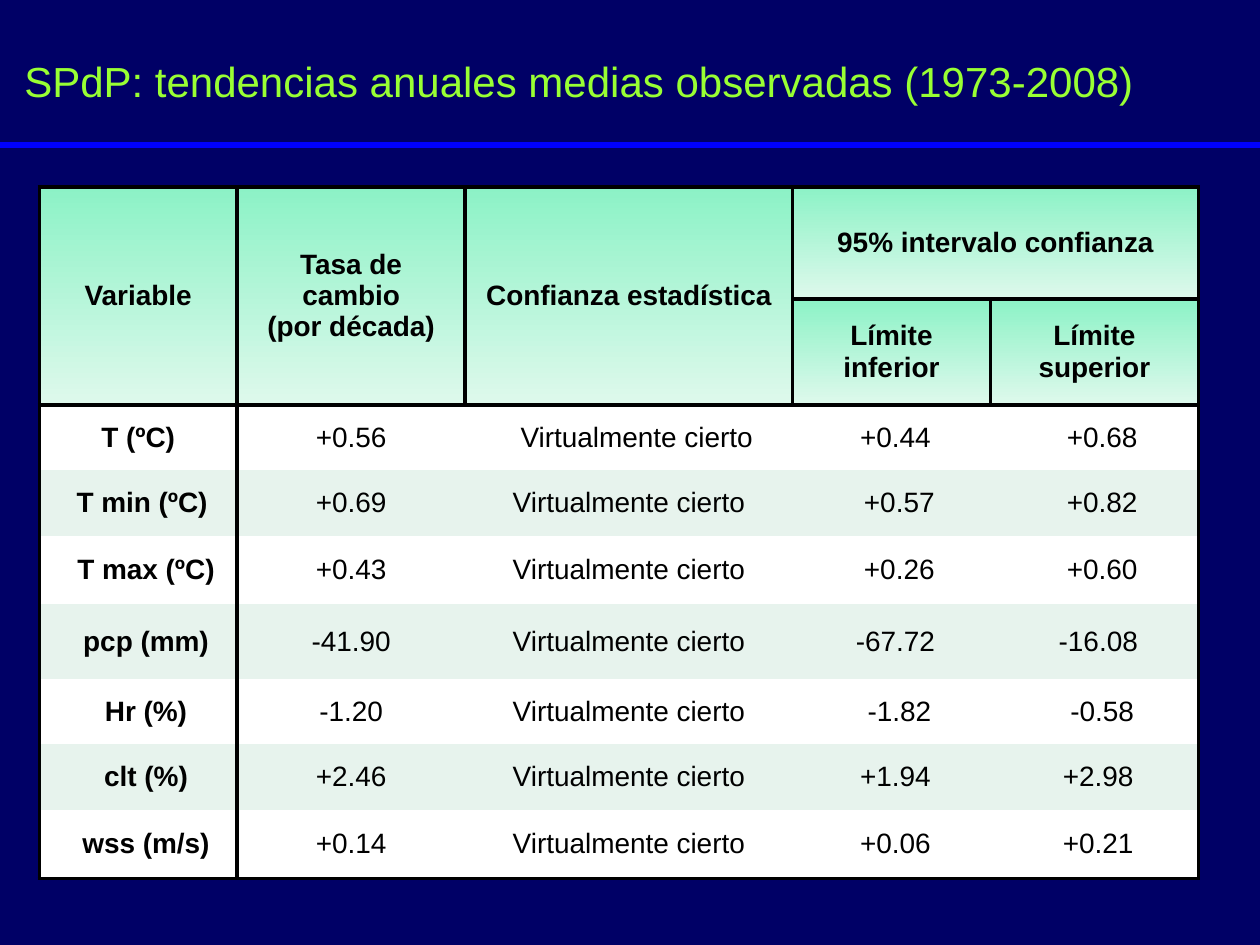
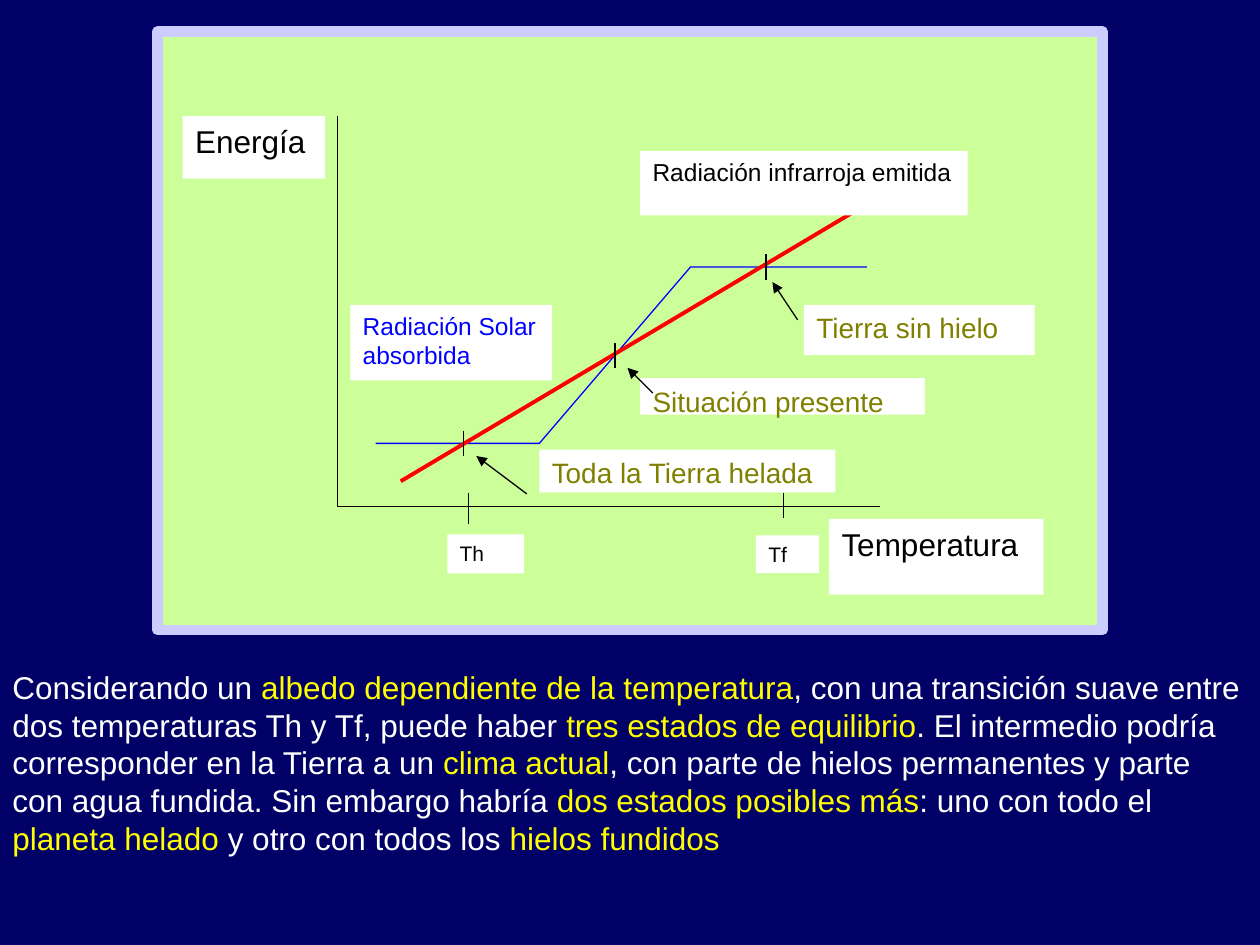
from lxml import etree
from pptx import Presentation
from pptx.dml.color import RGBColor
from pptx.enum import shapes, text
from pptx.oxml import ns
from pptx.util import Pt

FONT = "Arial"
NAVY = RGBColor(0x00, 0x00, 0x66)
LIME = RGBColor(0x99, 0xFF, 0x33)
BLUE = RGBColor(0x00, 0x00, 0xFF)
RED = RGBColor(0xFF, 0x00, 0x00)
BLACK = RGBColor(0x00, 0x00, 0x00)
WHITE = RGBColor(0xFF, 0xFF, 0xFF)
YELLOW = RGBColor(0xFF, 0xFF, 0x00)
OLIVE = RGBColor(0x80, 0x80, 0x00)
PALE_GREEN = RGBColor(0xCC, 0xFF, 0x99)
LAVENDER = RGBColor(0xCC, 0xCC, 0xFF)
MINT = RGBColor(0x8C, 0xF2, 0xC6)
PALE_MINT = RGBColor(0xDE, 0xF9, 0xEC)
STRIPE = RGBColor(0xE7, 0xF3, 0xED)

TITLE = "SPdP: tendencias anuales medias observadas (1973-2008)"
HEADERS = [
    (0, 0, 1, 0, ["Variable"]),
    (0, 1, 1, 1, ["Tasa de cambio", "(por década)"]),
    (0, 2, 1, 2, ["Confianza estadística"]),
    (0, 3, 0, 4, ["95% intervalo confianza"]),
    (1, 3, 1, 3, ["Límite inferior"]),
    (1, 4, 1, 4, ["Límite superior"]),
]
CERTAIN = "Virtualmente cierto"
TRENDS = [
    ("T (ºC)", "+0.56", CERTAIN, "+0.44", "+0.68"),
    ("T min (ºC)", "+0.69", CERTAIN, "+0.57", "+0.82"),
    ("T max (ºC)", "+0.43", CERTAIN, "+0.26", "+0.60"),
    ("pcp (mm)", "-41.90", CERTAIN, "-67.72", "-16.08"),
    ("Hr (%)", "-1.20", CERTAIN, "-1.82", "-0.58"),
    ("clt (%)", "+2.46", CERTAIN, "+1.94", "+2.98"),
    ("wss (m/s)", "+0.14", CERTAIN, "+0.06", "+0.21"),
]
INDENTS = [
    (0, 0, 2, 1, 2),
    (1, 0, 0, 2, 2),
    (2, 0, 0, 2, 2),
    (2, 0, 0, 1, 1),
    (2, 0, 0, 2, 2),
    (2, 0, 0, 1, 1),
    (2, 0, 0, 1, 1),
]
INDENT_STEP = 4.45
INSET = 7.2
COLUMN_WIDTHS = [113, 130.3, 187.2, 113, 118.8]
ROW_HEIGHTS = [64, 60.5, 37.5, 37.5, 38.9, 42.8, 37.3, 37.5, 39.4]

AXES = [(193, 66.2), (193, 289.4), (502.6, 289.4)]
ABSORBED = [(214.6, 253.4), (308.2, 253.4), (394.6, 152.6), (495.4, 152.6)]
EMITTED = [(495.4, 116.6), (229, 275)]
AXIS_TICKS = [(267.8, 281.5, 299.5), (447.8, 281.5, 295.9)]
HALF_TICK = 7.2
EQUILIBRIA = [
    ((265, 253.4), (36, 28.8), (7.2, 7.2)),
    ((351.4, 203), (21.6, 21.6), (7.2, 7.2)),
    ((437.8, 152.6), (18, 30.2), (3.6, 8.6)),
]
LABELS = [
    ("Energía", 18, BLACK, (104.4, 66.2, 81.4, 36)),
    ("Temperatura", 18, BLACK, (473.8, 296.6, 122.4, 43.2)),
    ("Radiación infrarroja emitida", 14, BLACK, (365.8, 86.4, 187.2, 36.7)),
    ("Radiación Solar absorbida", 14, BLUE, (200.2, 174.2, 115.2, 43.2)),
    ("Tierra sin hielo", 16, OLIVE, (459.4, 174.2, 131.8, 28.8)),
    ("Situación presente", 16, OLIVE, (365.8, 216, 162.7, 20.9)),
    ("Toda la Tierra helada", 16, OLIVE, (308.2, 257, 169.2, 24.5)),
    ("Th", 12, BLACK, (255.6, 305.3, 43.9, 22.3)),
    ("Tf", 12, BLACK, (432, 306, 36, 21.6)),
]
EXPLANATION = [
    ("Considerando un ", WHITE),
    ("albedo dependiente de la temperatura", YELLOW),
    (", con una transición suave entre dos temperaturas Th y Tf, puede haber ", WHITE),
    ("tres estados de equilibrio", YELLOW),
    (". El intermedio podría corresponder en la Tierra a un ", WHITE),
    ("clima actual", YELLOW),
    (", con parte de hielos permanentes y parte con agua fundida. Sin embargo habría ", WHITE),
    ("dos estados posibles más", YELLOW),
    (": uno con todo el ", WHITE),
    ("planeta helado ", YELLOW),
    ("y otro con todos los ", WHITE),
    ("hielos fundidos", YELLOW),
]


def apply(target, **values):
    for name, value in values.items():
        setattr(target, name, value)


def place(shape, left, top, width, height):
    apply(shape, left=Pt(left), top=Pt(top), width=Pt(width), height=Pt(height))


def add_span(para, words, size, color, bold=False):
    span = para.add_run()
    span.text = words
    apply(span.font, name=FONT, size=Pt(size), bold=bold)
    span.font.color.rgb = color


def set_line(shape, color, width):
    shape.line.color.rgb = color
    shape.line.width = Pt(width)


def add_line(page, start, end, color=BLACK, width=0.75, arrow=False):
    line = page.shapes.add_connector(
        shapes.MSO_CONNECTOR.STRAIGHT, *(Pt(value) for value in (*start, *end)))
    set_line(line, color, width)
    properties = line.element.spPr
    if arrow:
        etree.SubElement(properties.find(ns.qn("a:ln")), ns.qn("a:tailEnd"), type="triangle")
    etree.SubElement(properties, ns.qn("a:effectLst"))


def add_polyline(page, points, color):
    (left, top), *others = [(Pt(x), Pt(y)) for x, y in points]
    builder = page.shapes.build_freeform(left, top)
    builder.add_line_segments(others, close=False)
    curve = builder.convert_to_shape()
    curve.shadow.inherit = False
    curve.fill.background()
    set_line(curve, color, 0.75)


def add_rectangle(page, bounds, color):
    box = page.shapes.add_shape(shapes.MSO_SHAPE.RECTANGLE, *(Pt(value) for value in bounds))
    box.shadow.inherit = False
    box.fill.solid()
    box.fill.fore_color.rgb = color
    box.line.fill.background()
    return box


def set_borders(cell, drawn):
    properties = cell._tc.get_or_add_tcPr()
    for position, side in enumerate("LRTB"):
        border = etree.Element(ns.qn(f"a:ln{side}"), w=str(Pt(2.25)))
        if side in drawn:
            fill = etree.SubElement(border, ns.qn("a:solidFill"))
            etree.SubElement(fill, ns.qn("a:srgbClr"), val=str(BLACK))
        else:
            etree.SubElement(border, ns.qn("a:noFill"))
        properties.insert(position, border)


def fill_cell(cell, lines, bold, indent=0):
    apply(cell, vertical_anchor=text.MSO_ANCHOR.MIDDLE,
          margin_left=Pt(INSET + indent * INDENT_STEP))
    for index, words in enumerate(lines):
        para = cell.text_frame.add_paragraph() if index else cell.text_frame.paragraphs[0]
        para.alignment = text.PP_ALIGN.CENTER
        add_span(para, words, 16, BLACK, bold)


def style_header(cell):
    cell.fill.gradient()
    cell.fill.gradient_angle = 270
    for stop, color in zip(cell.fill.gradient_stops, (MINT, PALE_MINT)):
        stop.color.rgb = color
    set_borders(cell, "LRTB")


def add_trend_table(page):
    table = page.shapes.add_table(
        len(ROW_HEIGHTS), len(COLUMN_WIDTHS), Pt(22.5), Pt(106.8),
        Pt(sum(COLUMN_WIDTHS)), Pt(sum(ROW_HEIGHTS))).table
    for column, width in zip(table.columns, COLUMN_WIDTHS):
        column.width = Pt(width)
    for row, height in zip(table.rows, ROW_HEIGHTS):
        row.height = Pt(height)
    for row in range(2):
        for column in range(len(COLUMN_WIDTHS)):
            style_header(table.cell(row, column))
    for top, left, bottom, right, lines in HEADERS:
        cell = table.cell(top, left)
        if (top, left) != (bottom, right):
            cell.merge(table.cell(bottom, right))
        fill_cell(cell, lines, True)
    last_row, last_column = len(TRENDS) - 1, len(COLUMN_WIDTHS) - 1
    for row, (values, indents) in enumerate(zip(TRENDS, INDENTS)):
        for column, (value, indent) in enumerate(zip(values, indents)):
            cell = table.cell(row + 2, column)
            fill_cell(cell, [value], column == 0, indent)
            cell.fill.solid()
            cell.fill.fore_color.rgb = STRIPE if row % 2 else WHITE
            set_borders(cell, ("L" if column < 2 else "")
                        + ("R" if column in (0, last_column) else "")
                        + ("T" if row == 0 else "") + ("B" if row == last_row else ""))


def build_trends(deck):
    page = deck.slides.add_slide(deck.slide_layouts[5])
    title = page.shapes.title
    place(title, 0, 20, 720, 52)
    apply(title.text_frame, vertical_anchor=text.MSO_ANCHOR.MIDDLE, word_wrap=True,
          margin_left=Pt(13.9))
    para = title.text_frame.paragraphs[0]
    para.alignment = text.PP_ALIGN.LEFT
    add_span(para, TITLE, 24, LIME)
    add_trend_table(page)
    add_line(page, (0, 82.8), (720, 82.8), BLUE, 3)


def build_equilibria(deck):
    page = deck.slides.add_slide(deck.slide_layouts[6])
    panel = add_rectangle(page, (90, 18, 540, 342), PALE_GREEN)
    set_line(panel, LAVENDER, 6)
    add_polyline(page, AXES, BLACK)
    add_polyline(page, ABSORBED, BLUE)
    add_line(page, *EMITTED, RED, 2.25)
    for x, top, bottom in AXIS_TICKS:
        add_line(page, (x, top), (x, bottom))
    for words, size, color, bounds in LABELS:
        box = add_rectangle(page, bounds, WHITE)
        apply(box.text_frame, word_wrap=True, vertical_anchor=text.MSO_ANCHOR.TOP)
        para = box.text_frame.paragraphs[0]
        para.alignment = text.PP_ALIGN.LEFT
        add_span(para, words, size, color)
    for (x, y), tail, head in EQUILIBRIA:
        add_line(page, (x, y - HALF_TICK), (x, y + HALF_TICK))
        add_line(page, (x + tail[0], y + tail[1]), (x + head[0], y + head[1]), arrow=True)
    box = page.shapes.add_textbox(Pt(0), Pt(378), Pt(720), Pt(116.6))
    box.text_frame.word_wrap = True
    for words, color in EXPLANATION:
        add_span(box.text_frame.paragraphs[0], words, 18, color)


def main():
    deck = Presentation()
    apply(deck, slide_width=Pt(720), slide_height=Pt(540))
    background = deck.slide_master.background.fill
    background.solid()
    background.fore_color.rgb = NAVY
    build_trends(deck)
    build_equilibria(deck)
    deck.save("out.pptx")


if __name__ == "__main__":
    main()
